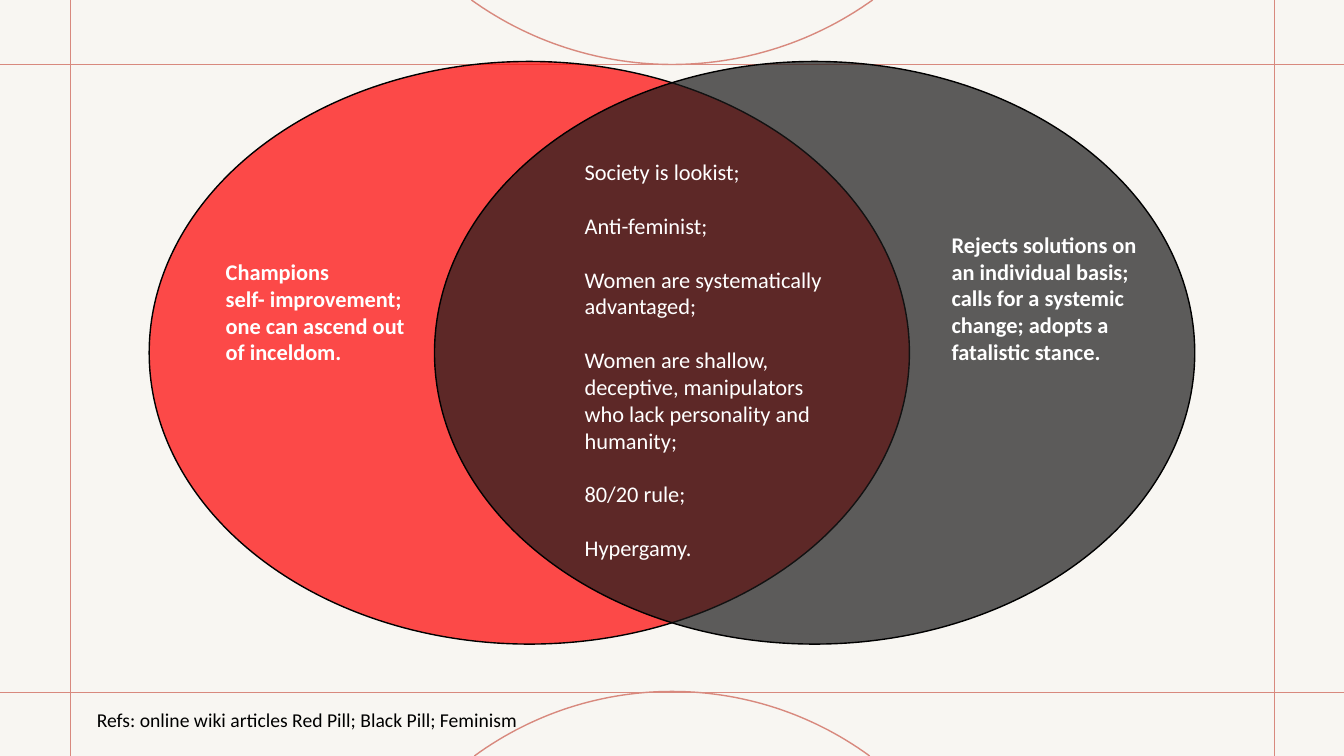
from math import asin, cos, sin

from lxml.etree import SubElement
from pptx import Presentation
from pptx.dml.color import RGBColor
from pptx.enum.shapes import MSO_CONNECTOR, MSO_SHAPE
from pptx.oxml.ns import qn
from pptx.util import Inches, Pt

WIDTH, HEIGHT = 13.33, 7.5
CREAM, ROSE, WHITE, BLACK = "F8F6F2", "D8897E", "FFFFFF", "000000"

RULES_ACROSS = [6.87, 0.64]
RULES_DOWN = [12.64, 0.7]

# crest y, edge y, half of the chord along the slide edge
ARCS = [(0.64, 0, 1.99), (6.86, HEIGHT, 1.96)]
ARC_STEPS = 60

CIRCLES = [(1.48, "FF0000"), (4.31, "1A1A1A")]
CIRCLE_TOP, CIRCLE_WIDTH, CIRCLE_HEIGHT = 0.61, 7.54, 5.78
OPACITY = 70

# Each group of lines stands one blank line below the group before it
SHARED_BELIEFS = [
    ["Society is lookist;"],
    ["Anti-feminist;"],
    ["Women are systematically advantaged;"],
    [
        "Women are shallow,",
        "deceptive, manipulators",
        "who lack personality and humanity;",
    ],
    ["80/20 rule;"],
    ["Hypergamy."],
]
RED_PILL = [["Champions", "self- improvement; one can ascend out of inceldom."]]
BLACK_PILL = [[
    "Rejects solutions on an individual basis;",
    "calls for a systemic change; adopts a fatalistic stance.",
]]
REFERENCES = [["Refs: online wiki articles Red Pill; Black Pill; Feminism"]]


def color(hex_code):
    return RGBColor.from_string(hex_code)


def set_line(shape, hex_code):
    shape.line.color.rgb = color(hex_code)
    shape.line.width = Pt(1)


def add_rule(slide, x1, y1, x2, y2):
    rule = slide.shapes.add_connector(
        MSO_CONNECTOR.STRAIGHT, Inches(x1), Inches(y1), Inches(x2), Inches(y2))
    set_line(rule, ROSE)
    SubElement(rule._element.spPr, qn("a:effectLst"))


def add_arc(slide, crest, edge, half_chord):
    """Draw a circular arc that touches crest and ends on the slide edge."""
    sag = abs(crest - edge)
    radius = (half_chord ** 2 + sag ** 2) / (2 * sag)
    toward_edge = 1 if edge > crest else -1
    half_angle = asin(half_chord / radius)
    points = []
    for step in range(ARC_STEPS + 1):
        angle = half_angle * (2 * step / ARC_STEPS - 1)
        x = WIDTH / 2 + radius * sin(angle)
        y = crest + toward_edge * radius * (1 - cos(angle))
        points.append((Inches(x), Inches(y)))
    builder = slide.shapes.build_freeform(*points[0])
    builder.add_line_segments(points[1:], close=False)
    arc = builder.convert_to_shape()
    arc.fill.background()
    set_line(arc, ROSE)
    arc.shadow.inherit = False


def add_circle(slide, left, hex_code):
    circle = slide.shapes.add_shape(
        MSO_SHAPE.OVAL, Inches(left), Inches(CIRCLE_TOP),
        Inches(CIRCLE_WIDTH), Inches(CIRCLE_HEIGHT))
    circle.shadow.inherit = False
    circle.fill.solid()
    circle.fill.fore_color.rgb = color(hex_code)
    fill_color = circle._element.spPr.find(qn("a:solidFill")).find(qn("a:srgbClr"))
    SubElement(fill_color, qn("a:alpha"), val=str(OPACITY * 1000))
    set_line(circle, BLACK)


def add_text(slide, groups, left, top, width, height, size=16, ink=WHITE,
             bold=False, inset_x=0.1, inset_y=0.05):
    box = slide.shapes.add_textbox(
        Inches(left), Inches(top), Inches(width), Inches(height))
    frame = box.text_frame
    frame.word_wrap = True
    frame.margin_left = frame.margin_right = Inches(inset_x)
    frame.margin_top = frame.margin_bottom = Inches(inset_y)
    paragraph = None
    for group in groups:
        for position, line in enumerate(group):
            is_first = paragraph is None
            paragraph = frame.paragraphs[0] if is_first else frame.add_paragraph()
            if position == 0 and not is_first:
                paragraph.space_before = Pt(size * 1.2)
            run = paragraph.add_run()
            run.text = line
            run.font.name = "Calibri"
            run.font.size = Pt(size)
            run.font.bold = bold
            run.font.color.rgb = color(ink)


def main():
    deck = Presentation()
    deck.slide_width, deck.slide_height = Inches(WIDTH), Inches(HEIGHT)
    slide = deck.slides.add_slide(deck.slide_layouts[6])
    slide.background.fill.solid()
    slide.background.fill.fore_color.rgb = color(CREAM)

    for y in RULES_ACROSS:
        add_rule(slide, 0, y, WIDTH, y)
    for x in RULES_DOWN:
        add_rule(slide, x, HEIGHT, x, 0)
    for arc in ARCS:
        add_arc(slide, *arc)
    for left, hex_code in CIRCLES:
        add_circle(slide, left, hex_code)

    add_text(slide, SHARED_BELIEFS, 5.7, 1.52, 2.92, 4.68)
    add_text(slide, RED_PILL, 2.14, 2.51, 2.01, 1.45, bold=True)
    add_text(slide, BLACK_PILL, 9.34, 2.24, 2.15, 1.99, bold=True)
    add_text(slide, REFERENCES, 0.89, 6.95, 4.69, 0.39, size=14, ink=BLACK,
             inset_x=0.07, inset_y=0.07)
    deck.save("out.pptx")


if __name__ == "__main__":
    main()
